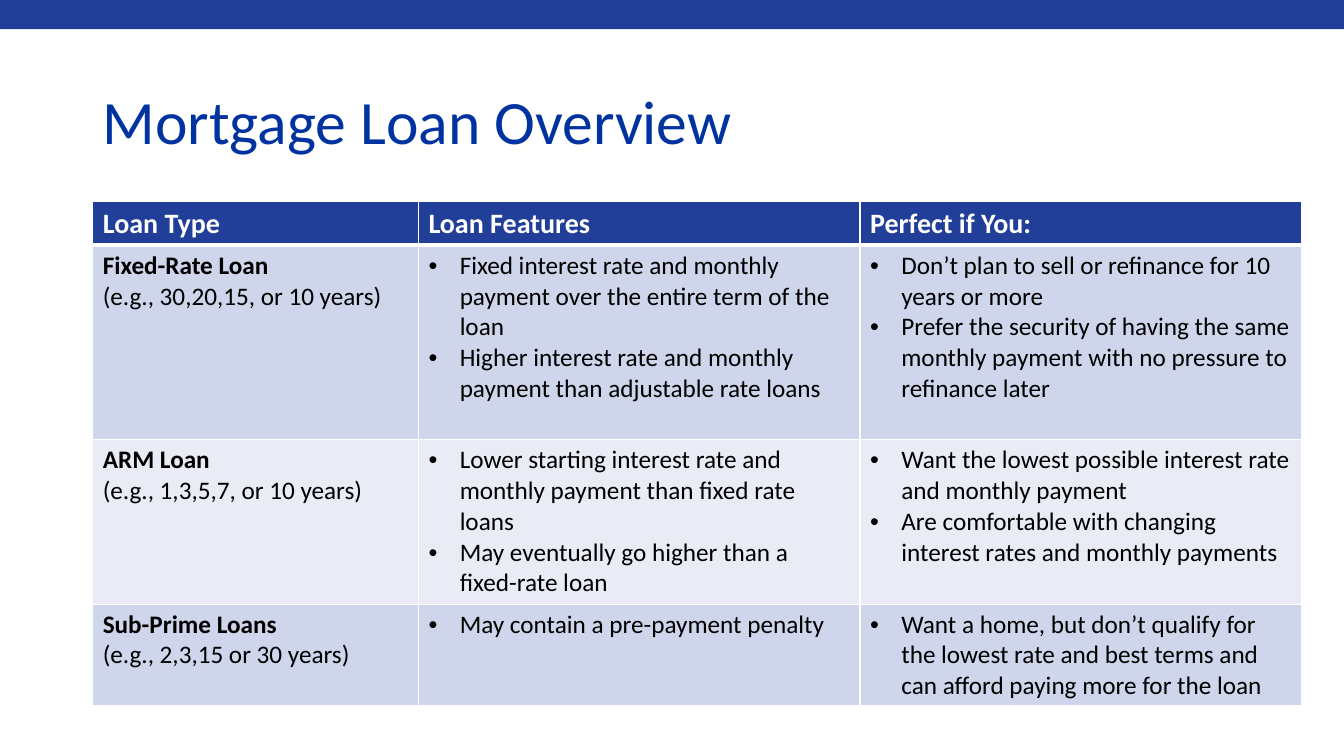
from lxml.etree import SubElement
from pptx import Presentation
from pptx.dml.color import RGBColor
from pptx.enum.shapes import MSO_SHAPE as Shape
from pptx.enum.text import MSO_ANCHOR as Anchor
from pptx.oxml.ns import qn
from pptx.util import Inches, Pt

NAVY = RGBColor(0x21, 0x3F, 0x98)
TITLE_BLUE = RGBColor(0x00, 0x33, 0xA0)
WHITE = RGBColor(0xFF, 0xFF, 0xFF)
BLACK = RGBColor(0x00, 0x00, 0x00)
BANDS = (RGBColor(0xCF, 0xD5, 0xEA), RGBColor(0xE9, 0xEB, 0xF5))

HEADINGS = ("Loan Type", "Loan Features", "Perfect if You:")
LOANS = (
    ("Fixed-Rate Loan", "(e.g., 30,20,15, or 10 years)",
     ("Fixed interest rate and monthly payment over the entire term of the loan",
      "Higher interest rate and monthly payment than adjustable rate loans"),
     ("Don’t plan to sell or refinance for 10 years or more",
      "Prefer the security of having the same monthly payment with no pressure "
      "to refinance later")),
    ("ARM Loan", "(e.g., 1,3,5,7, or 10 years)",
     ("Lower starting interest rate and monthly payment than fixed rate loans",
      "May eventually go higher than a fixed-rate loan"),
     ("Want the lowest possible interest rate and monthly payment",
      "Are comfortable with changing interest rates and monthly payments")),
    ("Sub-Prime Loans", "(e.g., 2,3,15 or 30 years)",
     ("May contain a pre-payment penalty",),
     ("Want a home, but don’t qualify for the lowest rate and best terms and "
      "can afford paying more for the loan",)),
)
COLUMN_WIDTHS = (3.23, 4.38, 4.38)
ROW_HEIGHTS = (0.43, 1.93, 1.63, 1.01)


def write(paragraph, text, size=18, color=BLACK, bold=False, bullet=False, font="Calibri"):
    run = paragraph.add_run()
    run.text = text
    run.font.name = font
    run.font.size = Pt(size)
    run.font.bold = bold
    run.font.color.rgb = color
    if bullet:
        properties = paragraph._p.get_or_add_pPr()
        properties.set("marL", str(Inches(0.31)))
        properties.set("indent", str(Inches(-0.31)))
        SubElement(properties, qn("a:buFont"), typeface="Arial")
        SubElement(properties, qn("a:buChar"), char="•")


class LoanSlide:
    def __init__(self, presentation):
        self.slide = presentation.slides.add_slide(presentation.slide_layouts[6])

    def bar(self, left, top, width, height, color):
        bar = self.slide.shapes.add_shape(
            Shape.RECTANGLE, Inches(left), Inches(top), Inches(width), Inches(height))
        bar.shadow.inherit = False
        bar.fill.solid()
        bar.fill.fore_color.rgb = color
        bar.line.fill.background()

    def title(self, text, left, top, width, height):
        frame = self.slide.shapes.add_textbox(
            Inches(left), Inches(top), Inches(width), Inches(height)).text_frame
        frame.word_wrap = True
        frame.vertical_anchor = Anchor.MIDDLE
        frame.paragraphs[0].line_spacing = 0.9
        write(frame.paragraphs[0], text, size=44, color=TITLE_BLUE)

    def table(self, left, top, widths, heights):
        table = self.slide.shapes.add_table(
            len(heights), len(widths), Inches(left), Inches(top),
            Inches(sum(widths)), Inches(sum(heights))).table
        table.first_row = table.horz_banding = False
        for column, width in zip(table.columns, widths):
            column.width = Inches(width)
        for row, height in zip(table.rows, heights):
            row.height = Inches(height)
        return table

    def cell(self, cell, lines, fill, top=1, bottom=1):
        """Fill a cell with lines, each a text and its format; top and bottom are border points."""
        properties = cell._tc.get_or_add_tcPr()
        for side, points in (("L", 1), ("R", 1), ("T", top), ("B", bottom)):
            border = SubElement(properties, qn(f"a:ln{side}"), w=str(Pt(points)))
            paint = SubElement(border, qn("a:solidFill"))
            SubElement(paint, qn("a:srgbClr"), val=str(WHITE))
        cell.fill.solid()
        cell.fill.fore_color.rgb = fill
        frame = cell.text_frame
        for index, (text, style) in enumerate(lines):
            paragraph = frame.add_paragraph() if index else frame.paragraphs[0]
            write(paragraph, text, **style)


def main():
    presentation = Presentation()
    presentation.slide_width = Inches(13.33)
    presentation.slide_height = Inches(7.5)

    page = LoanSlide(presentation)
    page.bar(0, -0.02, 13.33, 0.31, NAVY)
    page.title("Mortgage Loan Overview", 0.92, 0.76, 11.5, 0.95)

    overview = page.table(0.92, 2, COLUMN_WIDTHS, ROW_HEIGHTS)
    for column, heading in enumerate(HEADINGS):
        style = {"size": 20, "color": WHITE, "bold": True}
        page.cell(overview.cell(0, column), [(heading, style)], NAVY, bottom=3)
    for row, (loan, terms, features, buyers) in enumerate(LOANS, start=1):
        band = BANDS[(row - 1) % 2]
        top = 3 if row == 1 else 1
        page.cell(overview.cell(row, 0), [(loan, {"bold": True}), (terms, {})], band, top)
        for column, points in enumerate((features, buyers), start=1):
            lines = [(point, {"bullet": True}) for point in points]
            page.cell(overview.cell(row, column), lines, band, top)

    presentation.save("out.pptx")


if __name__ == "__main__":
    main()
